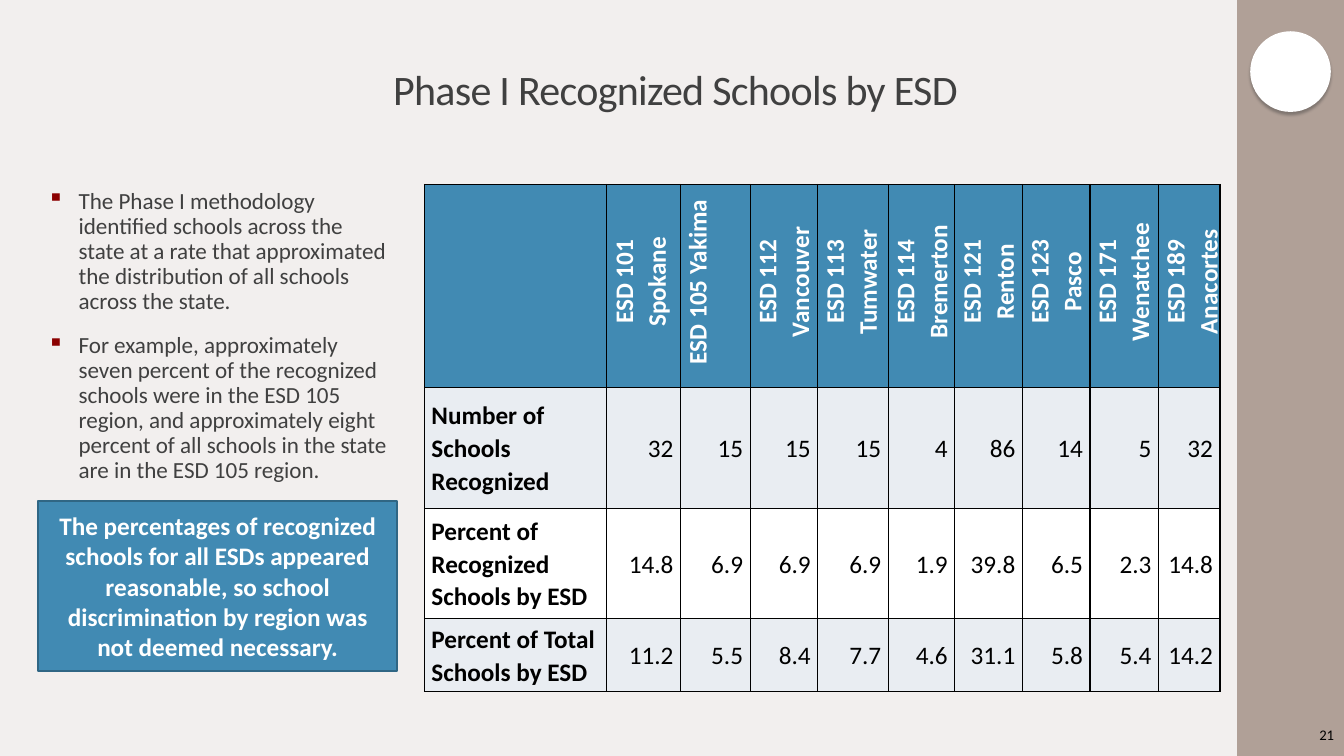
"""Build the slide on Phase I recognized schools by ESD."""
from dataclasses import dataclass
from typing import Any

from lxml import etree
from pptx import Presentation
from pptx.dml.color import RGBColor
from pptx.enum.shapes import MSO_SHAPE
from pptx.enum.text import MSO_ANCHOR, PP_ALIGN
from pptx.oxml.ns import qn
from pptx.util import Emu, Inches, Pt

RECTANGLE, OVAL = MSO_SHAPE.RECTANGLE, MSO_SHAPE.OVAL
LEFT, CENTER, RIGHT = PP_ALIGN.LEFT, PP_ALIGN.CENTER, PP_ALIGN.RIGHT
TOP, MIDDLE = MSO_ANCHOR.TOP, MSO_ANCHOR.MIDDLE
WIDTH, HEIGHT = Inches(13.33), Inches(7.5)


@dataclass(frozen=True)
class Theme:
    font: str = "Calibri"
    background: str = "F2EFEE"
    sidebar: str = "B0A097"
    accent: str = "418AB3"
    accent_edge: str = "306684"
    band: str = "E9EDF2"
    white: str = "FFFFFF"
    black: str = "000000"
    gray: str = "404040"
    bullet: str = "8B0000"
    shadow: str = "373737"
    title_size: float = 30
    body_size: float = 16.5
    strong_size: float = 18
    number_size: float = 10.5


THEME = Theme()


@dataclass(frozen=True)
class Box:
    """A place on the slide, in percent of its width and height."""
    left: float
    top: float
    width: float
    height: float

    def emu(self) -> tuple[Emu, Emu, Emu, Emu]:
        return across(self.left), down(self.top), across(self.width), down(self.height)


@dataclass(frozen=True)
class Style:
    size: float
    color: str
    bold: bool = False
    align: Any = LEFT
    spacing: float = 1.0
    before: float = 0
    after: float = 0
    indent: float = 0
    bullet: str = ""
    tracking: int = 0


@dataclass(frozen=True)
class Panel:
    box: Box
    kind: Any
    fill: str
    edge: str = ""


@dataclass(frozen=True)
class Passage:
    box: Box
    lines: tuple[str, ...]
    style: Style
    anchor: Any = MIDDLE
    frame: tuple[tuple[str, Any], ...] = ()


@dataclass(frozen=True)
class Measure:
    label: str
    values: tuple[str, ...]
    height: float
    fill: str


SIDEBAR = Panel(Box(92.05, 0, 7.95, 100), RECTANGLE, THEME.sidebar)
BADGE = Panel(Box(93.02, 4.13, 6, 10.67), OVAL, THEME.white)
CALLOUT = Panel(Box(2.85, 66.27, 26.71, 22.53), RECTANGLE, THEME.accent, THEME.accent_edge)

PASSAGES = (
    Passage(Box(9, 4.13, 82.52, 16.13), ("Phase I Recognized Schools by ESD",),
            Style(THEME.title_size, THEME.gray, align=CENTER, spacing=0.85, tracking=-50)),
    Passage(Box(3.53, 24.4, 25.43, 40.27), (
        "The Phase I methodology identified schools across the state at a rate that "
        "approximated the distribution of all schools across the state.",
        "For example, approximately seven percent of the recognized schools were in the "
        "ESD 105 region, and approximately eight percent of all schools in the state are "
        "in the ESD 105 region."),
        Style(THEME.body_size, THEME.gray, spacing=0.9, before=12, after=2, indent=0.31, bullet="▪"),
        TOP, (("margin_left", 0), ("margin_right", 0))),
    Passage(Box(92.05, 94.53, 7.95, 5.33), ("21",),
            Style(THEME.number_size, THEME.black, align=RIGHT)),
)
CALLOUT_TEXT = ("The percentages of recognized schools for all ESDs appeared reasonable, "
                "so school discrimination by region was not deemed necessary.")
CALLOUT_STYLE = Style(THEME.strong_size, THEME.white, bold=True, align=CENTER)

TABLE_BOX = Box(31.58, 24.4, 59.21, 63.2)
COLUMN_SHARES = (13.58, 5.48, 5.18, 5.03, 5.25, 4.95, 5.03, 5.03, 5.1, 4.58)
HEADER_HEIGHT = 22.93
DISTRICTS = (
    ("ESD 101", "Spokane"), ("ESD 105 Yakima",), ("ESD 112", "Vancouver"),
    ("ESD 113", "Tumwater"), ("ESD 114", "Bremerton"), ("ESD 121", "Renton"),
    ("ESD 123", "Pasco"), ("ESD 171", "Wenatchee"), ("ESD 189 Anacortes",),
)
MEASURES = (
    Measure("Number of Schools Recognized",
            ("32", "15", "15", "15", "4", "86", "14", "5", "32"), 16, THEME.band),
    Measure("Percent of Recognized Schools by ESD",
            ("14.8", "6.9", "6.9", "6.9", "1.9", "39.8", "6.5", "2.3", "14.8"), 14.53, THEME.white),
    Measure("Percent of Total Schools by ESD",
            ("11.2", "5.5", "8.4", "7.7", "4.6", "31.1", "5.8", "5.4", "14.2"), 9.73, THEME.band),
)
DISTRICT_STYLE = Style(THEME.strong_size, THEME.white, True, CENTER, 1.07, indent=0.08)
LABEL_STYLE = Style(THEME.strong_size, THEME.black, True, LEFT, 1.07)
VALUE_STYLE = Style(THEME.strong_size, THEME.black, False, RIGHT, 1.07)


def across(share: float) -> Emu:
    return Emu(round(WIDTH * share / 100))


def down(share: float) -> Emu:
    return Emu(round(HEIGHT * share / 100))


def assign(target: Any, values: dict[str, Any]) -> None:
    for name, value in values.items():
        setattr(target, name, value)


def paint(fill: Any, color: str) -> None:
    fill.solid()
    fill.fore_color.rgb = RGBColor.from_string(color)


def add_element(parent: Any, tag: str, **attributes: str) -> Any:
    return etree.SubElement(parent, qn(tag), attributes)


def write(frame: Any, lines: tuple[str, ...], style: Style) -> None:
    for index, line in enumerate(lines):
        paragraph = frame.add_paragraph() if index else frame.paragraphs[0]
        properties = paragraph._p.get_or_add_pPr()
        if style.indent:
            properties.set("marL", str(Inches(style.indent)))
        if style.bullet:
            properties.set("indent", str(-Inches(style.indent)))
            add_element(add_element(properties, "a:buClr"), "a:srgbClr", val=THEME.bullet)
            add_element(properties, "a:buChar", char=style.bullet)
        assign(paragraph, {"alignment": style.align, "line_spacing": style.spacing,
                           "space_before": Pt(style.before if index else 0),
                           "space_after": Pt(style.after)})
        run = paragraph.add_run()
        run.text = line
        assign(run.font, {"name": THEME.font, "size": Pt(style.size), "bold": style.bold})
        run.font.color.rgb = RGBColor.from_string(style.color)
        if style.tracking:
            run._r.get_or_add_rPr().set("spc", str(style.tracking))


def draw_panel(slide: Any, panel: Panel) -> Any:
    shape = slide.shapes.add_shape(panel.kind, *panel.box.emu())
    shape.shadow.inherit = False
    paint(shape.fill, panel.fill)
    if panel.edge:
        paint(shape.line.fill, panel.edge)
        shape.line.width = Pt(1.25)
    else:
        shape.line.fill.background()
    return shape


def cast_shadow(shape: Any) -> None:
    effects = shape._element.spPr.find(qn("a:effectLst"))
    shadow = add_element(effects, "a:outerShdw", blurRad=str(Pt(2)), dist=str(Pt(2)),
                         dir="5400000", algn="ctr", rotWithShape="0")
    color = add_element(shadow, "a:srgbClr", val=THEME.shadow)
    add_element(color, "a:alpha", val="40000")


def draw_passage(slide: Any, passage: Passage) -> None:
    frame = slide.shapes.add_textbox(*passage.box.emu()).text_frame
    assign(frame, {"word_wrap": True, "vertical_anchor": passage.anchor, **dict(passage.frame)})
    write(frame, passage.lines, passage.style)


def fill_cell(cell: Any, lines: tuple[str, ...], style: Style, fill: str) -> None:
    assign(cell, {"vertical_anchor": MIDDLE, "margin_left": Inches(0.07),
                  "margin_right": Inches(0.07), "margin_top": 0, "margin_bottom": 0})
    properties = cell._tc.get_or_add_tcPr()
    for side in ("a:lnL", "a:lnR", "a:lnT", "a:lnB"):
        border = add_element(properties, side, w=str(Pt(1)))
        add_element(add_element(border, "a:solidFill"), "a:srgbClr", val=THEME.black)
    paint(cell.fill, fill)
    write(cell.text_frame, lines, style)


def draw_table(slide: Any) -> None:
    table = slide.shapes.add_table(len(MEASURES) + 1, len(COLUMN_SHARES), *TABLE_BOX.emu()).table
    assign(table, {"first_row": False, "horz_banding": False})
    for column, share in zip(table.columns, COLUMN_SHARES):
        column.width = across(share)
    for row, share in zip(table.rows, (HEADER_HEIGHT, *(m.height for m in MEASURES))):
        row.height = down(share)
    fill_cell(table.cell(0, 0), (), LABEL_STYLE, THEME.accent)
    for column, district in enumerate(DISTRICTS, 1):
        cell = table.cell(0, column)
        fill_cell(cell, district, DISTRICT_STYLE, THEME.accent)
        cell._tc.tcPr.set("vert", "vert270")
    for row, measure in enumerate(MEASURES, 1):
        fill_cell(table.cell(row, 0), (measure.label,), LABEL_STYLE, measure.fill)
        for column, value in enumerate(measure.values, 1):
            fill_cell(table.cell(row, column), (value,), VALUE_STYLE, measure.fill)


def main() -> None:
    deck = Presentation()
    assign(deck, {"slide_width": WIDTH, "slide_height": HEIGHT})
    slide = deck.slides.add_slide(deck.slide_layouts[6])
    paint(slide.background.fill, THEME.background)
    draw_panel(slide, SIDEBAR)
    cast_shadow(draw_panel(slide, BADGE))
    for passage in PASSAGES:
        draw_passage(slide, passage)
    draw_table(slide)
    callout = draw_panel(slide, CALLOUT).text_frame
    assign(callout, {"word_wrap": True, "vertical_anchor": MIDDLE})
    write(callout, (CALLOUT_TEXT,), CALLOUT_STYLE)
    deck.save("out.pptx")


if __name__ == "__main__":
    main()
